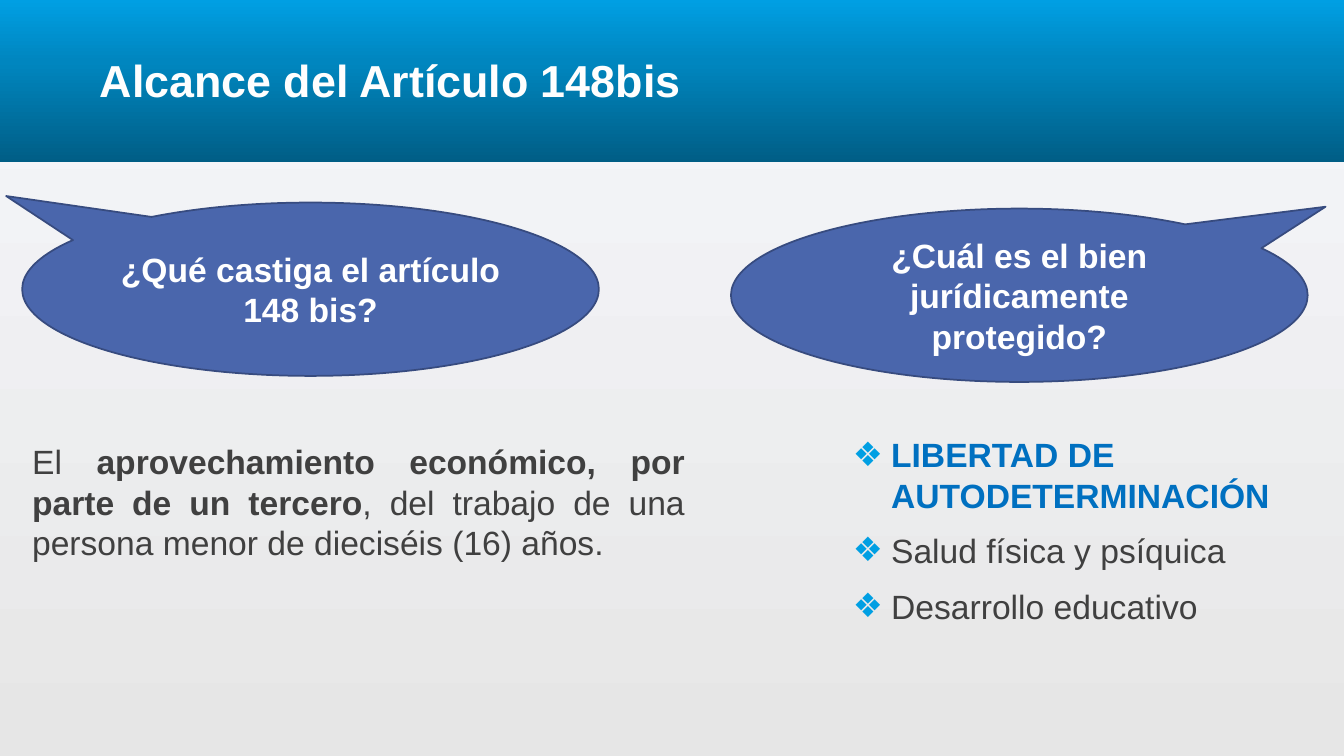
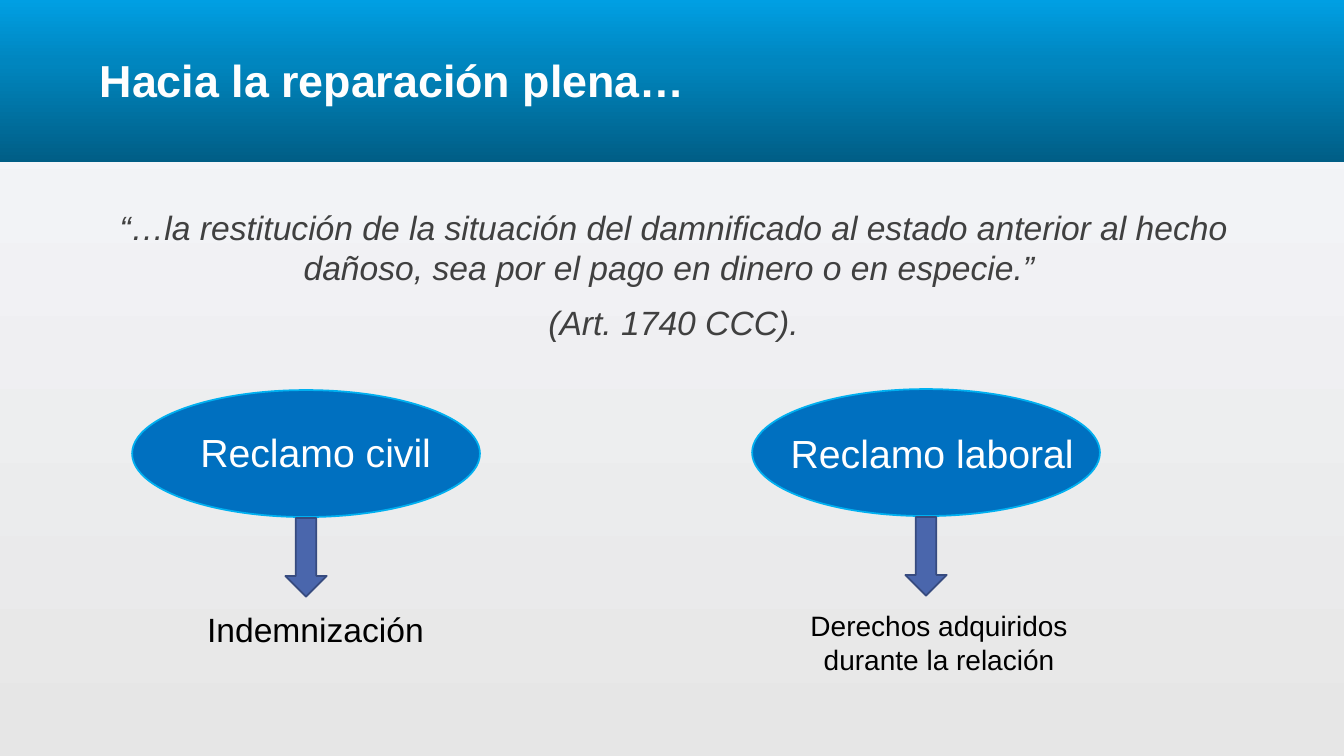
from copy import deepcopy
from dataclasses import dataclass

from pptx import Presentation
from pptx.dml.color import RGBColor
from pptx.enum.shapes import MSO_SHAPE
from pptx.enum.text import MSO_ANCHOR, PP_ALIGN
from pptx.oxml.ns import qn
from pptx.oxml.xmlchemy import OxmlElement
from pptx.util import Inches, Pt


@dataclass(frozen=True)
class Theme:
    font: str = "Arial"
    # Colours
    band: tuple = ((0, "005E86"), (0.62, "0086BF"), (1, "009FE3"))
    page: tuple = ((0.03, "F6F7FB"), (1, "E6E6E6"))
    title: str = "FEFEFE"
    body: str = "404040"
    strong: str = "0070C0"
    oval_line: str = "00B0F0"
    accent: str = "4A66AC"
    accent_line: str = "374B7F"
    bullet: str = "009FE3"
    white: str = "FFFFFF"
    black: str = "000000"
    # Sizes in points
    title_size: float = 32
    label_size: float = 28
    text_size: float = 24
    small_size: float = 20
    line_width: float = 1.25
    before: float = 4.8
    after: float = 6


@dataclass(frozen=True)
class Box:
    """Position and size in percent of the slide's width and height."""
    x: float
    y: float
    w: float
    h: float

    def emu(self) -> tuple:
        return (int(WIDTH * self.x / 100), int(HEIGHT * self.y / 100),
                int(WIDTH * self.w / 100), int(HEIGHT * self.h / 100))


@dataclass(frozen=True)
class Span:
    text: str
    bold: bool = False
    italic: bool = False
    color: str = ""


@dataclass(frozen=True)
class Callout:
    box: Box
    tip: tuple
    text: str


@dataclass(frozen=True)
class Claim:
    oval: Box
    label: str
    label_box: Box
    outcome: str
    outcome_box: Box
    outcome_size: float
    wrap: bool


T = Theme()
WIDTH, HEIGHT = Inches(13.33), Inches(7.5)
BAND = Box(0, 0, 100, 21.5)
TITLE = Box(6.68, 3.47, 86.72, 14.13)
ARROW_W, ARROW_H, ARROW_GAP = 3.08, 10.4, 0.13

# Slide 1 content
CALLOUTS = (
    Callout(Box(54.39, 27.6, 42.91, 22.93), (0.531, -0.511),
            "¿Cuál es el bien jurídicamente protegido?"),
    Callout(Box(1.65, 26.8, 42.91, 22.93), (-0.528, -0.538),
            "¿Qué castiga el artículo 148 bis?"),
)
STATEMENT = [[
    Span("El "),
    Span("aprovechamiento económico, por parte de un tercero", bold=True),
    Span(", del trabajo de una persona menor de dieciséis (16) años."),
]]
PROTECTED = [
    [Span("LIBERTAD DE AUTODETERMINACIÓN", bold=True, color=T.strong)],
    [Span("Salud física y psíquica")],
    [Span("Desarrollo educativo")],
]

# Slide 2 content
QUOTE = [
    [Span("“…la restitución de la situación del damnificado al estado anterior "
          "al hecho dañoso, sea por el pago en dinero o en especie.” ", italic=True)],
    [Span("(Art. 1740 CCC).", italic=True)],
]
CLAIMS = (
    Claim(Box(9.83, 51.6, 25.88, 16.8),
          "Reclamo civil", Box(14.03, 56, 18.9, 7.6),
          "Indemnización", Box(14.55, 79.87, 17.85, 6.67), T.text_size, False),
    Claim(Box(55.96, 51.47, 25.88, 16.8),
          "Reclamo laboral", Box(57.99, 56.13, 22.73, 7.6),
          "Derechos adquiridos durante la relación",
          Box(59.04, 79.87, 21.68, 10.27), T.small_size, True),
)


def rgb(color: str) -> RGBColor:
    return RGBColor.from_string(color)


def set_gradient(fill, element, stops: tuple, angle: float) -> None:
    fill.gradient()
    fill.gradient_angle = angle
    gs_list = next(element.iter(qn("a:gsLst")))
    while len(gs_list) < len(stops):
        gs_list.append(deepcopy(gs_list[0]))
    for stop, (position, color) in zip(fill.gradient_stops, stops):
        stop.position = position
        stop.color.rgb = rgb(color)


def add_figure(s, kind, box: Box, fill: str, line: str):
    sp = s.shapes.add_shape(kind, *box.emu())
    sp.shadow.inherit = False
    sp.fill.solid()
    sp.fill.fore_color.rgb = rgb(fill)
    sp.line.color.rgb = rgb(line)
    sp.line.width = Pt(T.line_width)
    return sp


def format_run(r, size: float, color: str, bold=False, italic=False) -> None:
    f = r.font
    f.name, f.size, f.bold, f.italic = T.font, Pt(size), bold, italic
    f.color.rgb = rgb(color)


def set_text(sp, text: str, size: float, color: str, bold=False,
             align=PP_ALIGN.CENTER, anchor=MSO_ANCHOR.MIDDLE, wrap=True) -> None:
    tf = sp.text_frame
    tf.text = text
    tf.word_wrap = wrap
    tf.vertical_anchor = anchor
    p = tf.paragraphs[0]
    p.alignment = align
    format_run(p.runs[0], size, color, bold)


def add_label(s, box: Box, text: str, size: float, color: str, **options) -> None:
    set_text(s.shapes.add_textbox(*box.emu()), text, size, color, **options)


def set_bullet(p) -> None:
    pPr = p._p.get_or_add_pPr()
    pPr.set("marL", str(Inches(0.38)))
    pPr.set("indent", str(-Inches(0.38)))
    color, font, char = (OxmlElement(f"a:{n}") for n in ("buClr", "buFont", "buChar"))
    value = OxmlElement("a:srgbClr")
    value.set("val", T.bullet)
    color.append(value)
    font.set("typeface", T.font)
    char.set("char", "❖")
    for item in (color, font, char):
        pPr.append(item)


def add_body(s, box: Box, paragraphs: list, align, bullets: bool = False) -> None:
    tf = s.shapes.add_textbox(*box.emu()).text_frame
    tf.word_wrap = True
    for i, spans in enumerate(paragraphs):
        p = tf.add_paragraph() if i else tf.paragraphs[0]
        p.alignment = align
        p.space_before, p.space_after = Pt(T.before), Pt(T.after)
        if bullets:
            set_bullet(p)
        for span in spans:
            r = p.add_run()
            r.text = span.text
            format_run(r, T.text_size, span.color or T.body, span.bold, span.italic)


def add_page(prs, title: str):
    s = prs.slides.add_slide(prs.slide_layouts[6])
    set_gradient(s.background.fill, s._element, T.page, 270)
    # Title band
    band = s.shapes.add_shape(MSO_SHAPE.RECTANGLE, *BAND.emu())
    band.shadow.inherit = False
    band.line.fill.background()
    set_gradient(band.fill, band._element, T.band, 90)
    add_label(s, TITLE, title, T.title_size, T.title, bold=True, align=PP_ALIGN.LEFT)
    return s


def add_callout(s, callout: Callout) -> None:
    sp = add_figure(s, MSO_SHAPE.OVAL_CALLOUT, callout.box, T.accent, T.accent_line)
    sp.adjustments[0], sp.adjustments[1] = callout.tip
    set_text(sp, callout.text, T.text_size, T.white, bold=True)


def add_claim(s, claim: Claim) -> None:
    oval = claim.oval
    arrow = Box(oval.x + (oval.w - ARROW_W) / 2, oval.y + oval.h + ARROW_GAP,
                ARROW_W, ARROW_H)
    add_figure(s, MSO_SHAPE.OVAL, oval, T.strong, T.oval_line)
    add_figure(s, MSO_SHAPE.DOWN_ARROW, arrow, T.accent, T.accent_line)
    add_label(s, claim.label_box, claim.label, T.label_size, T.white, wrap=False)
    add_label(s, claim.outcome_box, claim.outcome, claim.outcome_size, T.black,
              anchor=MSO_ANCHOR.TOP, wrap=claim.wrap)


def main() -> None:
    prs = Presentation()
    prs.slide_width, prs.slide_height = WIDTH, HEIGHT

    # Slide 1: scope of the article
    s = add_page(prs, "Alcance del Artículo 148bis")
    for callout in CALLOUTS:
        add_callout(s, callout)
    add_body(s, Box(1.65, 57.73, 50.04, 17.7), STATEMENT, PP_ALIGN.JUSTIFY)
    add_body(s, Box(62.72, 56.8, 36.7, 33), PROTECTED, PP_ALIGN.LEFT, bullets=True)

    # Slide 2: full reparation
    s = add_page(prs, "Hacia la reparación plena…")
    add_body(s, Box(6.83, 26.67, 86.57, 24), QUOTE, PP_ALIGN.CENTER)
    for claim in CLAIMS:
        add_claim(s, claim)

    prs.save("out.pptx")


if __name__ == "__main__":
    main()
